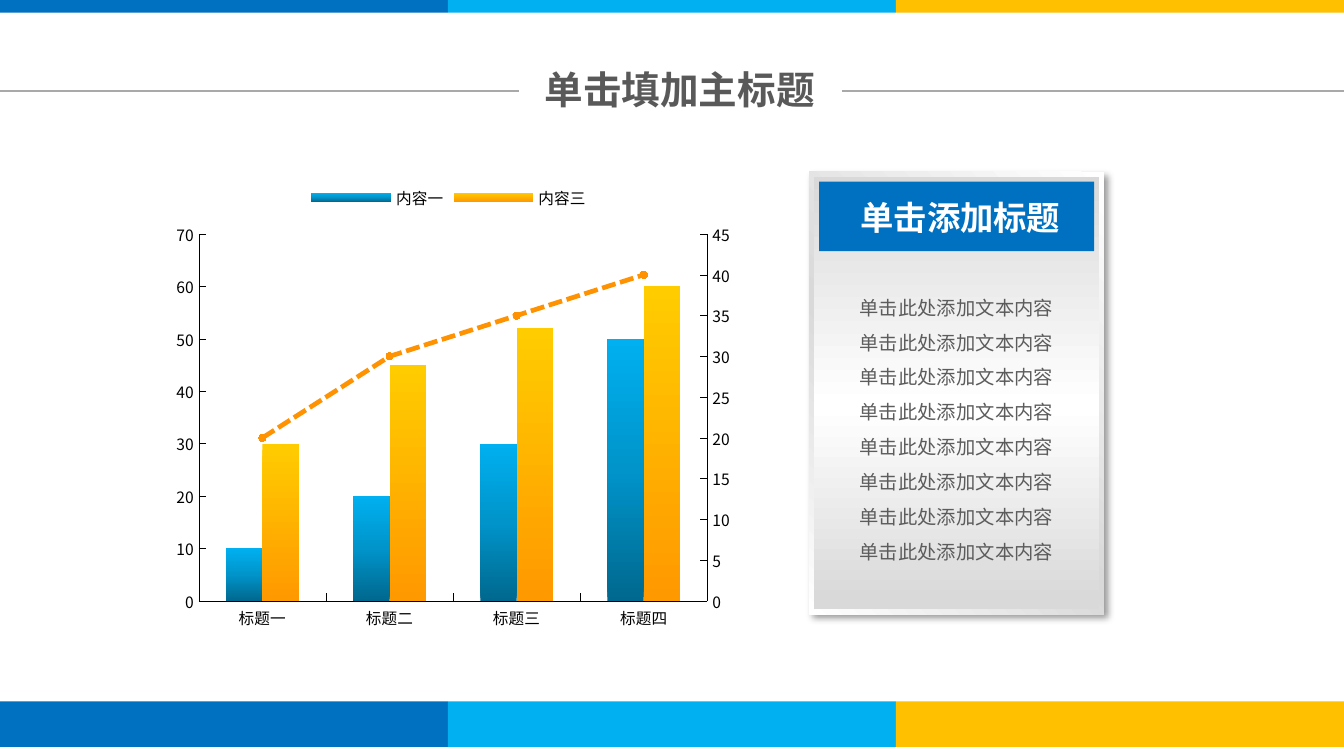
from lxml.etree import SubElement
from pptx import Presentation
from pptx.chart.data import CategoryChartData as Data
from pptx.dml.color import RGBColor
from pptx.enum.chart import XL_CHART_TYPE as Kind, XL_LEGEND_POSITION as Place
from pptx.enum.chart import XL_MARKER_STYLE as Mark, XL_TICK_MARK as Tick
from pptx.enum.dml import MSO_LINE as Dash
from pptx.enum.shapes import MSO_CONNECTOR as Link, MSO_SHAPE as Form
from pptx.enum.text import MSO_ANCHOR as Anchor, PP_ALIGN as Align
from pptx.oxml import parse_xml
from pptx.oxml.ns import nsdecls, qn
from pptx.util import Pt

WIDE, HIGH = 765.36, 425.52
BLUE, SKY, GOLD = "0070C0", "00B0F0", "FFC000"
SANS = "Noto Sans CJK SC"


def ink(code):
    return RGBColor.from_string(code)


def paint(fill, code):
    fill.solid()
    fill.fore_color.rgb = ink(code)


def grade(fill, node, stops, angle):
    fill.gradient()
    old = node.find(".//" + qn("a:gradFill"))
    marks = "".join(
        f'<a:gs pos="{pos * 1000}"><a:srgbClr val="{code}"/></a:gs>'
        for pos, code in stops)
    new = parse_xml(
        f'<a:gradFill {nsdecls("a")} rotWithShape="1"><a:gsLst>{marks}</a:gsLst>'
        f'<a:lin ang="{angle * 60000}" scaled="0"/></a:gradFill>')
    old.getparent().replace(old, new)


def block(slide, left, top, width, height, code=None):
    shape = slide.shapes.add_shape(
        Form.RECTANGLE, Pt(left), Pt(top), Pt(width), Pt(height))
    shape.shadow.inherit = False
    shape.line.fill.background()
    if code:
        paint(shape.fill, code)
    return shape


def write(slide, left, top, width, height, lines, size, code,
          face=SANS, bold=False, space=None, wrap=True):
    area = slide.shapes.add_textbox(Pt(left), Pt(top), Pt(width), Pt(height))
    frame = area.text_frame
    frame.word_wrap = wrap
    frame.vertical_anchor = Anchor.TOP if space else Anchor.MIDDLE
    frame.text = "\n".join(lines)
    for para in frame.paragraphs:
        para.alignment = Align.CENTER
        if space:
            para.line_spacing = Pt(space)
        font = para.font
        font.name, font.size, font.bold = face, Pt(size), bold
        font.color.rgb = ink(code)
        base = para._p.find(".//" + qn("a:defRPr"))
        SubElement(base, qn("a:ea")).set("typeface", SANS)


def bands(slide, top, height):
    width = WIDE / 3
    for i, code in enumerate((BLUE, SKY, GOLD)):
        block(slide, i * width, top, width, height, code)


def header(slide, top, height):
    write(slide, 270, top, 234, height, ["单击填加主标题"], 22, "5A5959",
          face="Arial", bold=True)
    level = Pt(top + height / 2 + 1)
    for start, end in ((0, 295.7), (479.5, WIDE)):
        rule = slide.shapes.add_connector(
            Link.STRAIGHT, Pt(start), level, Pt(end), level)
        rule.line.color.rgb = ink("A9A9A9")
        rule.line.width = Pt(1)
        SubElement(rule._element.spPr, qn("a:effectLst"))


def add_right(chart):
    area = chart._chartSpace.chart.plotArea
    bars = area.find(qn("c:barChart"))
    trend = bars.findall(qn("c:ser"))[-1]
    for flag in trend.findall(qn("c:invertIfNegative")):
        trend.remove(flag)
    line = parse_xml(
        f'<c:lineChart {nsdecls("c")}><c:grouping val="standard"/>'
        '<c:varyColors val="0"/><c:marker val="1"/>'
        '<c:axId val="11"/><c:axId val="12"/></c:lineChart>')
    line.insert(2, trend)
    bars.addnext(line)
    cats = parse_xml(
        f'<c:catAx {nsdecls("c")}><c:axId val="11"/>'
        '<c:scaling><c:orientation val="minMax"/></c:scaling>'
        '<c:delete val="1"/><c:axPos val="b"/><c:crossAx val="12"/></c:catAx>')
    vals = parse_xml(
        f'<c:valAx {nsdecls("c", "a")}><c:axId val="12"/><c:scaling>'
        '<c:orientation val="minMax"/><c:max val="45"/><c:min val="0"/></c:scaling>'
        '<c:delete val="0"/><c:axPos val="r"/>'
        '<c:numFmt formatCode="General" sourceLinked="0"/>'
        '<c:majorTickMark val="in"/><c:minorTickMark val="none"/>'
        '<c:tickLblPos val="nextTo"/><c:spPr><a:ln w="2800"><a:solidFill>'
        '<a:srgbClr val="000000"/></a:solidFill></a:ln></c:spPr>'
        '<c:crossAx val="11"/><c:crosses val="max"/>'
        '<c:crossBetween val="between"/><c:majorUnit val="5"/></c:valAx>')
    last = area.find(qn("c:valAx"))
    last.addnext(cats)
    cats.addnext(vals)
    for old in area.findall(qn("c:layout")):
        area.remove(old)
    spots = "".join(f'<c:{tag} val="{val}"/>' for tag, val in (
        ("layoutTarget", "inner"), ("xMode", "edge"), ("yMode", "edge"),
        ("x", 0.076), ("y", 0.13), ("w", 0.863), ("h", 0.766)))
    area.insert(0, parse_xml(
        f'<c:layout {nsdecls("c")}><c:manualLayout>{spots}'
        '</c:manualLayout></c:layout>'))


def graph(slide, left, top, width, height):
    data = Data()
    data.categories = ["标题一", "标题二", "标题三", "标题四"]
    data.add_series("内容一", (10, 20, 30, 50))
    data.add_series("内容三", (30, 45, 52, 60))
    data.add_series("内容二", (20, 30, 35, 40))
    chart = slide.shapes.add_chart(
        Kind.COLUMN_CLUSTERED, Pt(left), Pt(top), Pt(width), Pt(height), data).chart
    chart.has_title = False
    chart.font.name, chart.font.size = SANS, Pt(8.9)
    chart.font.color.rgb = ink("000000")
    for axis in (chart.category_axis, chart.value_axis):
        axis.has_major_gridlines = False
        axis.major_tick_mark, axis.minor_tick_mark = Tick.INSIDE, Tick.NONE
        axis.format.line.color.rgb = ink("000000")
        axis.format.line.width = Pt(0.22)
    scale = chart.value_axis
    scale.minimum_scale, scale.maximum_scale, scale.major_unit = 0, 70, 10
    chart.has_legend = True
    chart.legend.position = Place.TOP
    chart.legend.include_in_layout = False
    chart.legend._element.find(qn("c:legendPos")).addnext(parse_xml(
        f'<c:legendEntry {nsdecls("c")}><c:idx val="2"/>'
        '<c:delete val="1"/></c:legendEntry>'))
    add_right(chart)
    bars, line = chart.plots
    bars.gap_width, bars.overlap, bars.vary_by_categories = 150, 0, False
    looks = (([(0, "00688E"), (50, "0094CA"), (100, SKY)], 270),
             ([(0, "FFCC00"), (100, "FF9900")], 90))
    for bar, (stops, angle) in zip(bars.series, looks):
        grade(bar.format.fill, bar._element, stops, angle)
    trend = line.series[0]
    trend.smooth = False
    pen = trend.format.line
    pen.color.rgb, pen.width = ink("FF9201"), Pt(2.67)
    pen.dash_style = Dash.SQUARE_DOT
    trend.marker.style, trend.marker.size = Mark.CIRCLE, 4
    paint(trend.marker.format.fill, "FF9201")
    trend.marker.format.line.color.rgb = ink("FF9201")


def panel(slide, left, top, width, height):
    rim = block(slide, left, top, width, height)
    grade(rim.fill, rim._element,
          [(0, "FFFFFF"), (57, "D9D9D9"), (100, "FFFFFF")], 135)
    rim._element.spPr.find(qn("a:effectLst")).append(parse_xml(
        f'<a:outerShdw {nsdecls("a")} blurRad="{Pt(4)}" dist="{Pt(3)}" '
        'dir="2700000" algn="tl" rotWithShape="0"><a:srgbClr val="000000">'
        '<a:alpha val="40000"/></a:srgbClr></a:outerShdw>'))
    core = block(slide, left + 2.8, top + 2.8, width - 5.6, height - 5.6)
    grade(core.fill, core._element,
          [(2, "D9D9D9"), (47, "FFFFFF"), (100, "D9D9D9")], 270)
    block(slide, left + 5.6, top + 5.6, width - 11.2, 39.6, BLUE)
    write(slide, left + 21.6, top + 10.8, 129, 29.5, ["单击添加标题"],
          19, "FFFFFF", bold=True, wrap=False)
    write(slide, left + 15.1, top + 60.5, 137.5, 168.5,
          ["单击此处添加文本内容"] * 8, 11, "5C5C5C", space=19.85)


def main():
    deck = Presentation()
    deck.slide_width, deck.slide_height = Pt(WIDE), Pt(HIGH)
    slide = deck.slides.add_slide(deck.slide_layouts[6])
    bands(slide, 0, 7.2)
    bands(slide, 399.6, 25.92)
    header(slide, 33.8, 33.8)
    graph(slide, 87.8, 97.9, 335.5, 272.9)
    panel(slide, 460.8, 97.9, 167.8, 252)
    deck.save("out.pptx")


if __name__ == "__main__":
    main()
